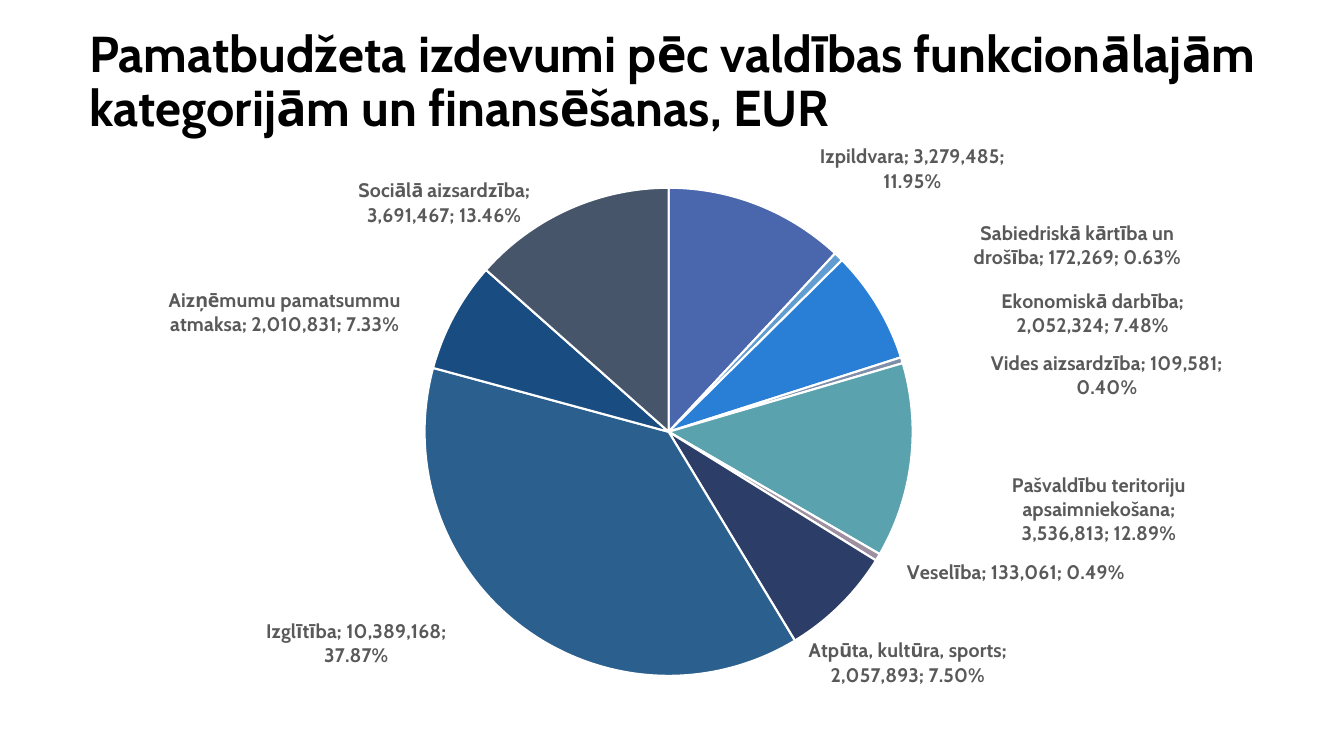
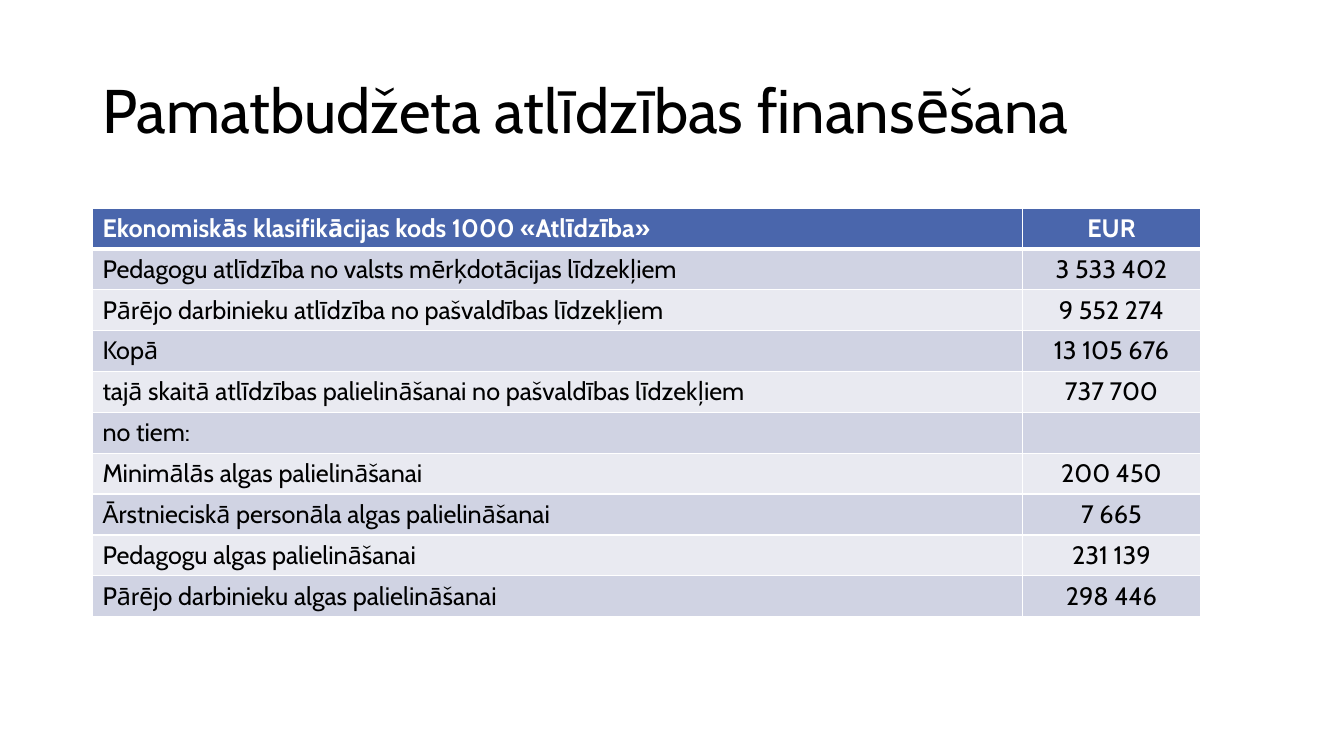
from copy import deepcopy

from pptx import Presentation
from pptx.chart.data import CategoryChartData
from pptx.dml.color import RGBColor
from pptx.enum.chart import XL_CHART_TYPE, XL_LABEL_POSITION
from pptx.enum.text import MSO_ANCHOR, MSO_AUTO_SIZE, PP_ALIGN
from pptx.oxml import parse_xml
from pptx.oxml.ns import nsdecls, qn
from pptx.util import Cm, Pt

PIE = XL_CHART_TYPE.PIE
OUTSIDE = XL_LABEL_POSITION.OUTSIDE_END
MIDDLE = MSO_ANCHOR.MIDDLE
NO_FIT = MSO_AUTO_SIZE.NONE
LEFT, CENTER = PP_ALIGN.LEFT, PP_ALIGN.CENTER

FONT = "Cabin"
COLORS = {
    "text": "000000",
    "label": "595959",
    "white": "FFFFFF",
    "head": "4A66AC",
    "odd": "D0D3E3",
    "even": "E9EAF1",
}

# Category, value, slice colour, label shift as a share of the chart size
SLICES = [
    ("Izpildvara", 3279485, "4A66AC", (0.05, -0.01)),
    ("Sabiedriskā kārtība un drošība", 172269, "629DD1", (0.11, 0.03)),
    ("Ekonomiskā darbība", 2052324, "297FD5", (0.1, 0.06)),
    ("Vides aizsardzība", 109581, "7F8FA9", (0.07, 0.07)),
    ("Pašvaldību teritoriju apsaimniekošana", 3536813, "5AA2AE", (0.08, 0.02)),
    ("Veselība", 133061, "9D90A0", (0.02, 0)),
    ("Atpūta, kultūra, sports", 2057893, "2C3D67", (-0.03, 0.05)),
    ("Izglītība", 10389168, "2A5F8E", (-0.06, -0.02)),
    ("Aizņēmumu pamatsummu atmaksa", 2010831, "194C80", (-0.04, 0.04)),
    ("Sociālā aizsardzība", 3691467, "47556A", (-0.03, 0.04)),
]

ROWS = [
    ("Ekonomiskās klasifikācijas kods 1000 «Atlīdzība»", "EUR"),
    ("Pedagogu atlīdzība no valsts mērķdotācijas līdzekļiem", "3 533 402"),
    ("Pārējo darbinieku atlīdzība no pašvaldības līdzekļiem", "9 552 274"),
    ("Kopā", "13 105 676"),
    ("tajā skaitā atlīdzības palielināšanai no pašvaldības līdzekļiem", "737 700"),
    ("no tiem:", ""),
    ("Minimālās algas palielināšanai", "200 450"),
    ("Ārstnieciskā personāla algas palielināšanai", "7 665"),
    ("Pedagogu algas palielināšanai", "231 139"),
    ("Pārējo darbinieku algas palielināšanai", "298 446"),
]


def rgb(name):
    return RGBColor.from_string(COLORS.get(name, name))


def set_font(font, size, color, bold=False):
    font.name = FONT
    font.size = Pt(size)
    font.bold = bold
    font.color.rgb = rgb(color)


def add_text(par, text, size, color="text", bold=False, align=LEFT):
    par.alignment = align
    run = par.add_run()
    run.text = text
    set_font(run.font, size, color, bold)


def add_slide(prs, title, box, size, bold=False):
    slide = prs.slides.add_slide(prs.slide_layouts[5])
    shape = slide.shapes.title
    shape.left, shape.top, shape.width, shape.height = map(Cm, box)
    frame = shape.text_frame
    frame.word_wrap = True
    frame.auto_size = NO_FIT
    frame.vertical_anchor = MIDDLE
    par = frame.paragraphs[0]
    par.line_spacing = 0.9
    add_text(par, title, size, bold=bold)
    return slide


def make_layout(x, y, extra=""):
    return parse_xml(
        f'<c:layout {nsdecls("c")}><c:manualLayout>{extra}'
        f'<c:x val="{x}"/><c:y val="{y}"/></c:manualLayout></c:layout>')


def place_plot(chart, x, y, width, height):
    """Fix the inner plot area, in shares of the chart size."""
    layout = make_layout(
        x, y, '<c:layoutTarget val="inner"/>'
        '<c:xMode val="edge"/><c:yMode val="edge"/>')
    for tag, share in (("w", width), ("h", height)):
        layout[0].append(parse_xml(f'<c:{tag} {nsdecls("c")} val="{share}"/>'))
    area = chart.plots[0]._element.getparent()
    for old in area.findall(qn("c:layout")):
        area.remove(old)
    area.insert(0, layout)


def add_labels(series):
    """Label each slice, moved from its default place by its shift."""
    labels = series.data_labels
    labels.number_format = "0.00%"
    labels.number_format_is_linked = False
    set_font(labels.font, 14, "label", True)
    labels.position = OUTSIDE
    labels.show_value = True
    labels.show_category_name = True
    labels.show_percentage = True
    root = labels._element
    lines = root.find(qn("c:showLeaderLines"))
    if lines is not None:
        root.remove(lines)
    root.append(parse_xml(f'<c:separator {nsdecls("c")}>; </c:separator>'))
    shared = list(root)
    for index, (_, _, _, shift) in enumerate(SLICES):
        label = parse_xml(
            f'<c:dLbl {nsdecls("c")}><c:idx val="{index}"/></c:dLbl>')
        label.append(make_layout(*shift))
        label.extend(deepcopy(part) for part in shared)
        root.insert(index, label)
    root.append(parse_xml(f'<c:showLeaderLines {nsdecls("c")} val="0"/>'))


def add_pie(slide, box):
    data = CategoryChartData(number_format="#,##0")
    data.categories = [row[0] for row in SLICES]
    data.add_series("Series 1", [row[1] for row in SLICES])
    chart = slide.shapes.add_chart(PIE, *map(Cm, box), data).chart
    chart.has_title = False
    chart.has_legend = False
    set_font(chart.font, 10, "text")
    plot = chart.plots[0]
    plot.vary_by_categories = True
    series = plot.series[0]
    for index, (_, _, color, _) in enumerate(SLICES):
        style = series.points[index].format
        style.fill.solid()
        style.fill.fore_color.rgb = rgb(color)
        style.line.color.rgb = rgb("white")
        style.line.width = Pt(1.5)
    add_labels(series)
    place_plot(chart, 0.29, 0.1, 0.41, 0.83)


def set_borders(cell, top, bottom):
    props = cell._tc.get_or_add_tcPr()
    for side, width in (("L", 1), ("R", 1), ("T", top), ("B", bottom)):
        props.append(parse_xml(
            f'<a:ln{side} {nsdecls("a")} w="{Pt(width)}"><a:solidFill>'
            f'<a:srgbClr val="{COLORS["white"]}"/></a:solidFill></a:ln{side}>'))


def fill_cell(cell, row, col, text):
    head = row == 0
    set_borders(cell, 3 if row == 1 else 1, 3 if head else 1)
    cell.fill.solid()
    cell.fill.fore_color.rgb = rgb(
        "head" if head else "odd" if row % 2 else "even")
    par = cell.text_frame.paragraphs[0]
    if text:
        add_text(par, text, 18, "white" if head else "text", head,
                 CENTER if col else LEFT)
    else:
        par.font.size = Pt(18)


def add_grid(slide, left, top, widths, height):
    table = slide.shapes.add_table(
        len(ROWS), len(widths), Cm(left), Cm(top),
        Cm(sum(widths)), Cm(height * len(ROWS))).table
    for col, width in enumerate(widths):
        table.columns[col].width = Cm(width)
    for row, texts in enumerate(ROWS):
        table.rows[row].height = Cm(height)
        for col, text in enumerate(texts):
            fill_cell(table.cell(row, col), row, col, text)


def main():
    prs = Presentation()
    prs.slide_width, prs.slide_height = Cm(33.87), Cm(19.05)

    spend = add_slide(
        prs, "Pamatbudžeta izdevumi pēc valdības funkcionālajām "
        "kategorijām un finansēšanas, EUR", (2, 0.6, 30.63, 3), 36, True)
    add_pie(spend, (2, 3.23, 30, 14.86))

    pay = add_slide(prs, "Pamatbudžeta atlīdzības finansēšana",
                    (2.33, 1.01, 29.21, 3.68), 44)
    add_grid(pay, 2.33, 5.24, (23.43, 4.5), 1.03)

    prs.save("out.pptx")


if __name__ == "__main__":
    main()
